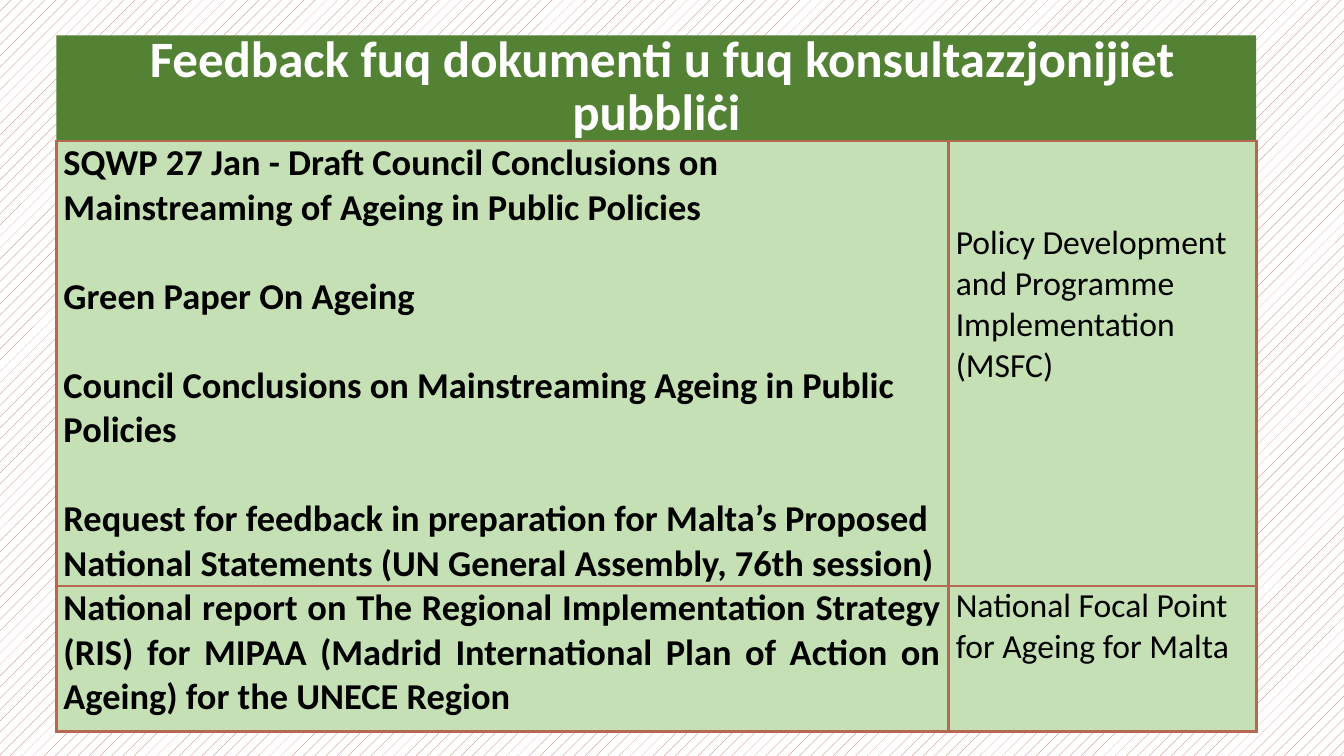
import lxml.etree
import pptx
import pptx.dml.color
import pptx.enum.dml
import pptx.enum.text
import pptx.oxml.ns
import pptx.util

Inches, Pt = pptx.util.Inches, pptx.util.Pt
ALIGN = pptx.enum.text.PP_ALIGN
COLORS = {"banner": "548235", "cell": "C5E0B4", "rule": "B66952",
          "dark": "000000", "light": "FFFFFF"}
FONT = "Calibri"
LEFT, WIDTH = Inches(0.56), Inches(11.9)
BANNER_TOP, BANNER_HEIGHT = Inches(0.35), Inches(1.05)
COLUMNS, ROWS = (8.85, 3.05), (4.41, 1.44)
TOPIC_SIZE, OWNER_SIZE = 26, 24
LINE = 1.22  # height of a text line as a share of its font size


def rgb(name):
    return pptx.dml.color.RGBColor.from_string(COLORS[name])


def style(run, size, color, bold):
    run.font.name = FONT
    run.font.size = Pt(size)
    run.font.bold = bold
    run.font.color.rgb = rgb(color)


prs = pptx.Presentation()
prs.slide_width, prs.slide_height = Inches(13.33), Inches(7.5)
slide = prs.slides.add_slide(prs.slide_layouts[5])

backdrop = slide.background.fill
backdrop.patterned()
backdrop.pattern = pptx.enum.dml.MSO_PATTERN.PERCENT_10
backdrop.fore_color.rgb = rgb("rule")
backdrop.back_color.rgb = rgb("light")

# Title banner
banner = slide.shapes.title
banner.left, banner.top = LEFT, BANNER_TOP
banner.width, banner.height = WIDTH, BANNER_HEIGHT
banner.fill.solid()
banner.fill.fore_color.rgb = rgb("banner")
heading = banner.text_frame
heading.text = " Feedback fuq dokumenti u fuq konsultazzjonijiet pubbliċi"
heading.word_wrap = True
heading.auto_size = pptx.enum.text.MSO_AUTO_SIZE.NONE
heading.vertical_anchor = pptx.enum.text.MSO_ANCHOR.MIDDLE
heading_line = heading.paragraphs[0]
heading_line.alignment = ALIGN.CENTER
heading_line.line_spacing = 0.87
heading_line.space_before = Pt(0)
heading_line.space_after = Pt(8)
style(heading_line.runs[0], 36.4, "light", True)

# Each row: topics on the left, the responsible body on the right
entries = [
    (["SQWP 27 Jan - Draft Council Conclusions on Mainstreaming of Ageing in Public Policies",
      "Green Paper On Ageing",
      "Council Conclusions on Mainstreaming Ageing in Public Policies",
      "Request for feedback in preparation for Malta’s Proposed National Statements "
      "(UN General Assembly, 76th session)"],
     ["Policy Development and Programme Implementation (MSFC)"]),
    (["National report on The Regional Implementation Strategy (RIS) for MIPAA "
      "(Madrid International Plan of Action on Ageing) for the UNECE Region"],
     ["National Focal Point for Ageing for Malta"]),
]
feedback = slide.shapes.add_table(len(ROWS), len(COLUMNS), LEFT, BANNER_TOP + BANNER_HEIGHT,
                                  WIDTH, Inches(sum(ROWS))).table
feedback.first_row = feedback.horz_banding = False
for column, width in zip(feedback.columns, COLUMNS):
    column.width = Inches(width)
for row, height in zip(feedback.rows, ROWS):
    row.height = Inches(height)

for r, entry in enumerate(entries):
    for c, texts in enumerate(entry):
        size = (TOPIC_SIZE, OWNER_SIZE)[c]
        cell = feedback.cell(r, c)
        cell.margin_left = cell.margin_right = Inches(0.07)
        cell.margin_top = cell.margin_bottom = 0
        cell.fill.solid()
        cell.fill.fore_color.rgb = rgb("cell")
        cell.text_frame.text = "\n".join(texts)
        for i, paragraph in enumerate(cell.text_frame.paragraphs):
            if i:
                paragraph.space_before = Pt(size * LINE)
            style(paragraph.runs[0], size, "dark", c == 0)
        tc_pr = cell._tc.get_or_add_tcPr()
        for i, side in enumerate(("lnL", "lnR", "lnT", "lnB")):
            border = lxml.etree.Element(pptx.oxml.ns.qn("a:" + side), w=str(Pt(2.25)))
            solid = lxml.etree.SubElement(border, pptx.oxml.ns.qn("a:solidFill"))
            lxml.etree.SubElement(solid, pptx.oxml.ns.qn("a:srgbClr"), val=COLORS["rule"])
            tc_pr.insert(i, border)

# The first responsible body starts two lines down; the report is justified
feedback.cell(0, 1).margin_top = Pt(2 * OWNER_SIZE * LINE)
feedback.cell(1, 0).text_frame.paragraphs[0].alignment = ALIGN.JUSTIFY

prs.save("out.pptx")
